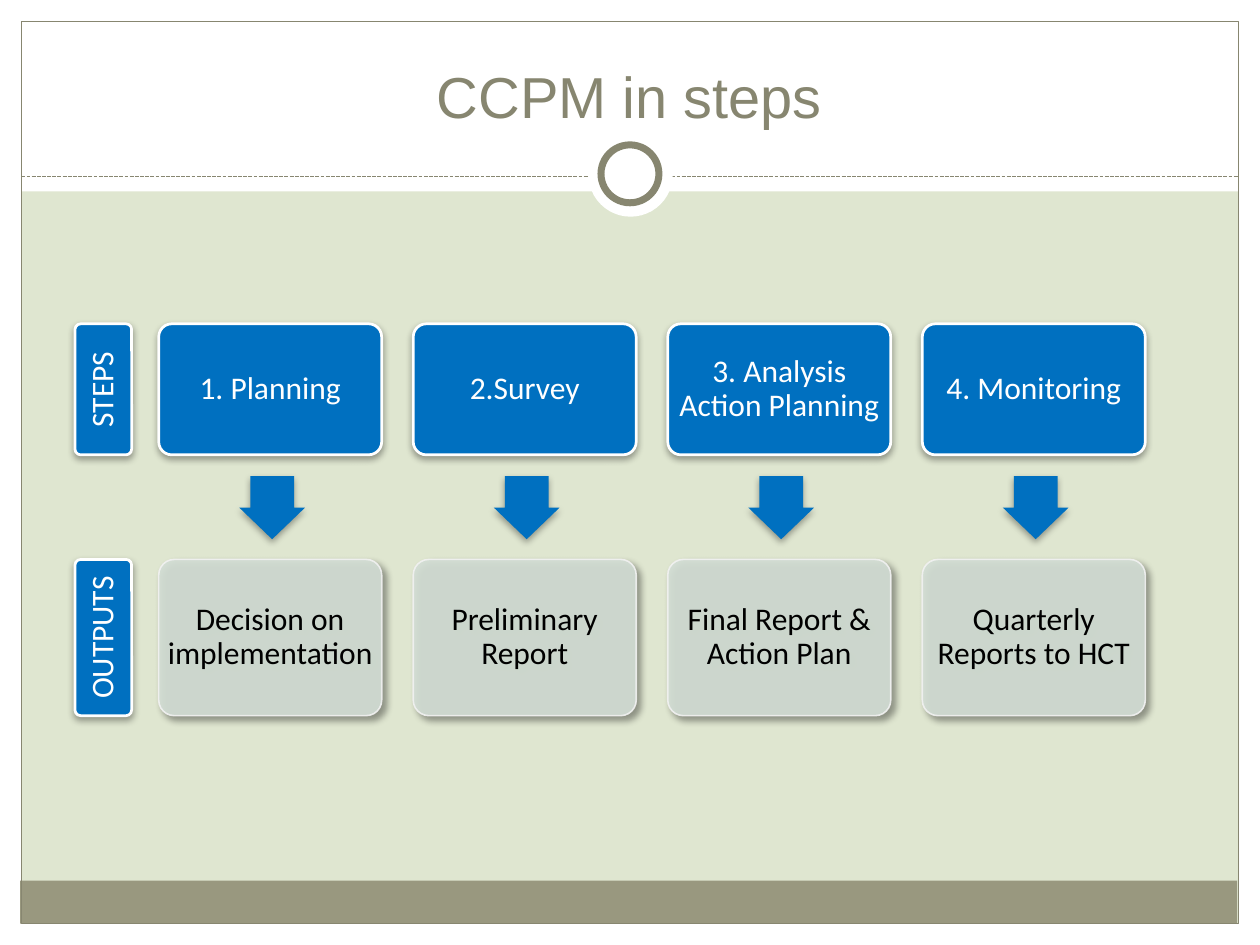
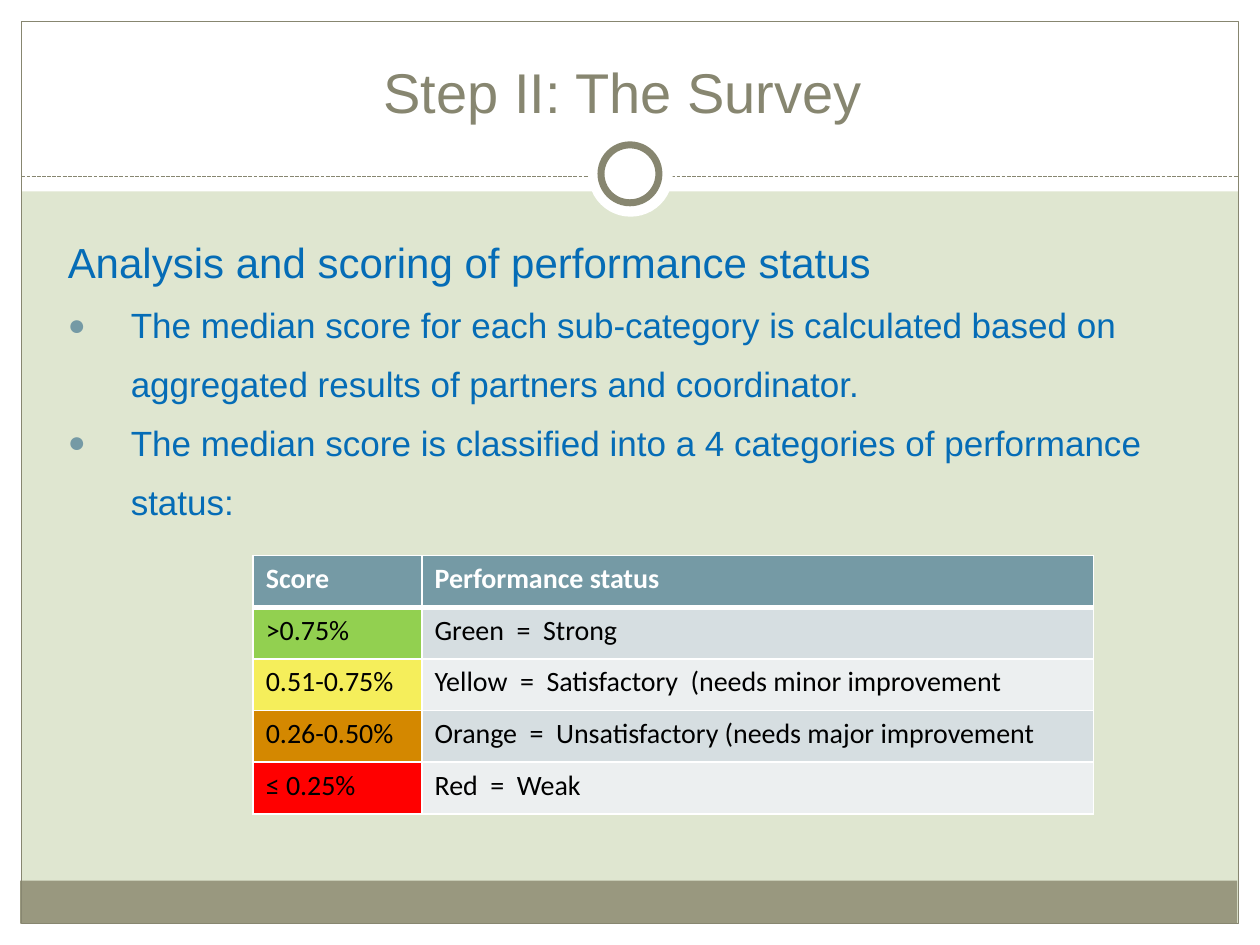
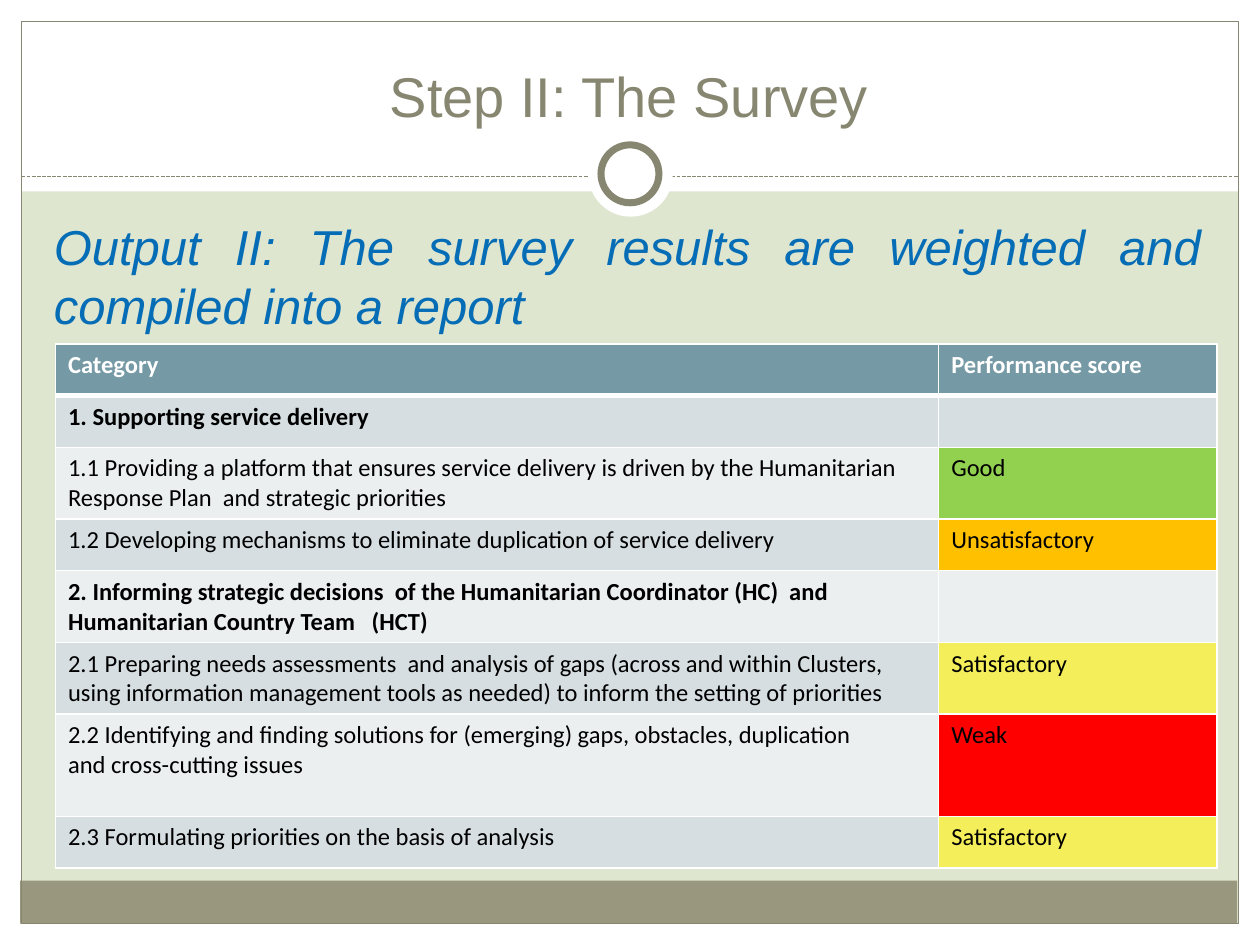
from lxml.etree import SubElement
from pptx import Presentation
from pptx.dml.color import RGBColor
from pptx.enum.dml import MSO_LINE
from pptx.enum.shapes import MSO_CONNECTOR, MSO_SHAPE as SHAPE
from pptx.enum.text import MSO_ANCHOR as ANCHOR, PP_ALIGN as ALIGN
from pptx.oxml.ns import qn
from pptx.util import Inches, Pt

WHITE = RGBColor(0xFF, 0xFF, 0xFF)
BLACK = RGBColor(0x00, 0x00, 0x00)
SAGE = RGBColor(0xDF, 0xE6, 0xD0)
OLIVE = RGBColor(0x87, 0x86, 0x70)
FOOTER = RGBColor(0x99, 0x98, 0x7F)
BLUE = RGBColor(0x00, 0x70, 0xC0)
TEXT_BLUE = RGBColor(0x05, 0x6C, 0xB6)
TILE = RGBColor(0xD3, 0xDE, 0xD5)
TILE_EDGE = RGBColor(0xF2, 0xF2, 0xF2)
TEAL = RGBColor(0x75, 0x9A, 0xA5)
BAND_DARK = RGBColor(0xD6, 0xDE, 0xE1)
BAND_LIGHT = RGBColor(0xEC, 0xEF, 0xF0)
GREEN = RGBColor(0x92, 0xD0, 0x50)
YELLOW = RGBColor(0xF5, 0xEE, 0x5B)
ORANGE = RGBColor(0xD4, 0x88, 0x00)
AMBER = RGBColor(0xFF, 0xC0, 0x00)
RED = RGBColor(0xFF, 0x00, 0x00)


def write(para, text, size, color, font="Arial", bold=False, italic=False):
    span = para.add_run()
    span.text = text
    span.font.name = font
    span.font.size = Pt(size)
    span.font.color.rgb = color
    span.font.bold = bold
    span.font.italic = italic


def add_box(page, kind, at, fill=None, edge=None, width=0.75, alpha=None, shadow=None):
    """Add a preset shape; alpha is in percent, shadow is (alpha, blur, distance, angle)."""
    box = page.shapes.add_shape(kind, *map(Inches, at))
    box.shadow.inherit = False
    if fill is None:
        box.fill.background()
    else:
        box.fill.solid()
        box.fill.fore_color.rgb = fill
    if edge is None:
        box.line.fill.background()
    else:
        box.line.color.rgb = edge
        box.line.width = Pt(width)
    properties = box._element.spPr
    if alpha:
        for color in properties.iter(qn("a:srgbClr")):
            SubElement(color, qn("a:alpha"), val=str(alpha * 1000))
    if shadow:
        strength, blur, distance, angle = shadow
        outer = SubElement(properties.find(qn("a:effectLst")), qn("a:outerShdw"),
                           blurRad=str(Pt(blur)), dist=str(Pt(distance)),
                           dir=str(angle * 60000), rotWithShape="0")
        color = SubElement(outer, qn("a:srgbClr"), val="000000")
        SubElement(color, qn("a:alpha"), val=str(strength * 1000))
    return box


deck = Presentation()
deck.slide_width, deck.slide_height = Inches(10), Inches(7.5)

# Frame and title of every page
titles = [
    ("CCPM in steps", 33, (0.33, 0.25, 9.33, 0.83)),
    ("Step II: The Survey", 32, (0.28, 0.21, 9.33, 0.83)),
    ("Step II: The Survey", 32, (0.33, 0.36, 9.33, 0.71)),
]
for title, size, at in titles:
    page = deck.slides.add_slide(deck.slide_layouts[6])
    page.background.fill.solid()
    page.background.fill.fore_color.rgb = SAGE
    for margin in [(0, 7.33, 10, 0.17), (0, 0, 10, 1.52),
                   (0, 0, 0.17, 7.5), (9.83, 0, 0.17, 7.5)]:
        add_box(page, SHAPE.RECTANGLE, margin, WHITE)
    add_box(page, SHAPE.RECTANGLE, (0.16, 6.99, 9.66, 0.34), FOOTER)
    add_box(page, SHAPE.RECTANGLE, (0.17, 0.17, 9.66, 7.16), edge=OLIVE)
    rule = page.shapes.add_connector(MSO_CONNECTOR.STRAIGHT, Inches(0.17), Inches(1.4),
                                     Inches(9.83), Inches(1.4))
    rule.line.color.rgb = OLIVE
    rule.line.width = Pt(0.75)
    rule.line.dash_style = MSO_LINE.SQUARE_DOT
    SubElement(rule._element.spPr, qn("a:effectLst"))
    add_box(page, SHAPE.OVAL, (4.67, 1.05, 0.67, 0.67), WHITE)
    add_box(page, SHAPE.OVAL, (4.77, 1.15, 0.46, 0.46), WHITE, OLIVE, 4)
    frame = page.shapes.add_textbox(*map(Inches, at)).text_frame
    frame.word_wrap = True
    frame.vertical_anchor = ANCHOR.BOTTOM
    frame.paragraphs[0].alignment = ALIGN.CENTER
    write(frame.paragraphs[0], title, size, OLIVE)

steps_page, scoring_page, report_page = deck.slides

# Steps and their outputs
STEP_TOP, STEP_HEIGHT = 2.57, 1.04
OUTPUT_TOP, OUTPUT_HEIGHT = 4.44, 1.24
TILE_LEFT, TILE_WIDTH, TILE_PITCH = 1.26, 1.77, 2.02
LABEL_MIDDLE, LABEL_WIDTH = 0.82, 0.45
blue_look = dict(fill=BLUE, edge=WHITE, width=1.57, shadow=(35, 4, 2, 90))
pale_look = dict(fill=TILE, edge=TILE_EDGE, width=0.9, alpha=90, shadow=(40, 4, 3, 45))

steps = [
    ("1. Planning", "Decision on implementation"),
    ("2.Survey", "Preliminary Report"),
    ("3. Analysis Action Planning", "Final Report & Action Plan"),
    ("4. Monitoring", "Quarterly Reports to HCT"),
]
tiles = []
for column, (step, output) in enumerate(steps):
    left = TILE_LEFT + column * TILE_PITCH
    tiles.append((step, (left, STEP_TOP, TILE_WIDTH, STEP_HEIGHT), 0, WHITE, blue_look))
    tiles.append((output, (left, OUTPUT_TOP, TILE_WIDTH, OUTPUT_HEIGHT), 0, BLACK, pale_look))
    arrow = add_box(steps_page, SHAPE.DOWN_ARROW, (left + 0.64, 3.78, 0.52, 0.5),
                    BLUE, shadow=(35, 4, 2, 90))
    arrow.adjustments[0] = 0.667
    arrow.adjustments[1] = 0.5
for label, top, height in [("STEPS", STEP_TOP, STEP_HEIGHT),
                           ("OUTPUTS", OUTPUT_TOP, OUTPUT_HEIGHT)]:
    at = (LABEL_MIDDLE - height / 2, top + (height - LABEL_WIDTH) / 2, height, LABEL_WIDTH)
    tiles.append((label, at, 270, WHITE, blue_look))

for text, at, rotation, color, look in tiles:
    tile = add_box(steps_page, SHAPE.ROUNDED_RECTANGLE, at, **look)
    tile.adjustments[0] = 0.1
    tile.rotation = rotation
    frame = tile.text_frame
    frame.word_wrap = True
    frame.vertical_anchor = ANCHOR.MIDDLE
    frame.margin_left = frame.margin_right = Inches(0.02)
    frame.margin_top = frame.margin_bottom = Inches(0.02)
    frame.paragraphs[0].alignment = ALIGN.CENTER
    frame.paragraphs[0].line_spacing = 0.9
    write(frame.paragraphs[0], text, 18, color, "Calibri")

# Body text of the two survey pages
BODY = [Inches(length) for length in (0.33, 1.67, 9.3, 5)]
frame = scoring_page.shapes.add_textbox(*BODY).text_frame
frame.word_wrap = True
heading = frame.paragraphs[0]
heading.line_spacing = 1.4
heading._p.get_or_add_pPr().set("marL", str(Inches(0.11)))
write(heading, "Analysis and scoring of performance status", 24, TEXT_BLUE)
for text in [
    "The median score for each sub-category is calculated based on "
    "aggregated results of partners and coordinator.",
    "The median score is classified into a 4 categories of performance status:",
]:
    para = frame.add_paragraph()
    para.line_spacing = 1.4
    properties = para._p.get_or_add_pPr()
    properties.set("marL", str(Inches(0.61)))
    properties.set("indent", str(Inches(-0.5)))
    SubElement(SubElement(properties, qn("a:buClr")), qn("a:srgbClr"), val=str(TEAL))
    SubElement(properties, qn("a:buSzPct"), val="85000")
    SubElement(properties, qn("a:buFont"), typeface="Arial")
    SubElement(properties, qn("a:buChar"), char="●")
    write(para, text, 20, TEXT_BLUE)

frame = report_page.shapes.add_textbox(*BODY).text_frame
frame.word_wrap = True
frame.paragraphs[0].alignment = ALIGN.JUSTIFY
write(frame.paragraphs[0],
      "Output II: The survey results are weighted and compiled into a report",
      28, TEXT_BLUE, italic=True)

# Tables: each row is (height, texts, colour of the score cell, bold)
score_rows = [
    (0.41, ("Score", "Performance status"), TEAL, True),
    (0.41, (">0.75%", "Green  =  Strong"), GREEN, False),
    (0.41, ("0.51-0.75%", "Yellow  =  Satisfactory  (needs minor improvement"), YELLOW, False),
    (0.41, ("0.26-0.50%", "Orange  =  Unsatisfactory (needs major improvement"), ORANGE, False),
    (0.41, ("≤ 0.25%", "Red  =  Weak"), RED, False),
]
report_rows = [
    (0.41, ("Category", "Performance score"), TEAL, True),
    (0.41, ("1. Supporting service delivery", ""), BAND_DARK, True),
    (0.57, ("1.1 Providing a platform that ensures service delivery is driven by the "
            "Humanitarian Response Plan  and strategic priorities", "Good"), GREEN, False),
    (0.41, ("1.2 Developing mechanisms to eliminate duplication of service delivery",
            "Unsatisfactory"), AMBER, False),
    (0.57, ("2. Informing strategic decisions  of the Humanitarian Coordinator (HC)  and "
            "Humanitarian Country Team   (HCT)", ""), BAND_LIGHT, True),
    (0.57, ("2.1 Preparing needs assessments  and analysis of gaps (across and within "
            "Clusters, using information management tools as needed) to inform the setting "
            "of priorities", "Satisfactory"), YELLOW, False),
    (0.81, ("2.2 Identifying and finding solutions for (emerging) gaps, obstacles, "
            "duplication\nand cross-cutting issues", "Weak"), RED, False),
    (0.41, ("2.3 Formulating priorities on the basis of analysis", "Satisfactory"),
     YELLOW, False),
]
tables = [
    (scoring_page, (2.01, 4.41), (1.34, 5.33), 16, 0, score_rows),
    (report_page, (0.44, 2.73), (7.01, 2.21), 14, 1, report_rows),
]
for page, (left, top), widths, size, score_column, rows in tables:
    height = sum(row[0] for row in rows)
    table = page.shapes.add_table(len(rows), len(widths), Inches(left), Inches(top),
                                  Inches(sum(widths)), Inches(height)).table
    table.horz_banding = False
    for column, width in enumerate(widths):
        table.columns[column].width = Inches(width)
    for index, (height, texts, score_color, bold) in enumerate(rows):
        table.rows[index].height = Inches(height)
        band = TEAL if index == 0 else BAND_DARK if index % 2 else BAND_LIGHT
        for column, text in enumerate(texts):
            cell = table.cell(index, column)
            properties = cell._tc.get_or_add_tcPr()
            for side in ("lnL", "lnR", "lnT", "lnB"):
                thick = (index, side) in [(0, "lnB"), (1, "lnT")]
                border = SubElement(properties, qn(f"a:{side}"), w=str(Pt(3 if thick else 1)))
                SubElement(SubElement(border, qn("a:solidFill")), qn("a:srgbClr"),
                           val=str(WHITE))
            cell.fill.solid()
            cell.fill.fore_color.rgb = score_color if column == score_column else band
            for number, line in enumerate(text.split("\n") if text else []):
                frame = cell.text_frame
                para = frame.add_paragraph() if number else frame.paragraphs[0]
                write(para, line, size, BLACK if index else WHITE, "Calibri", bold)

deck.save("out.pptx")
